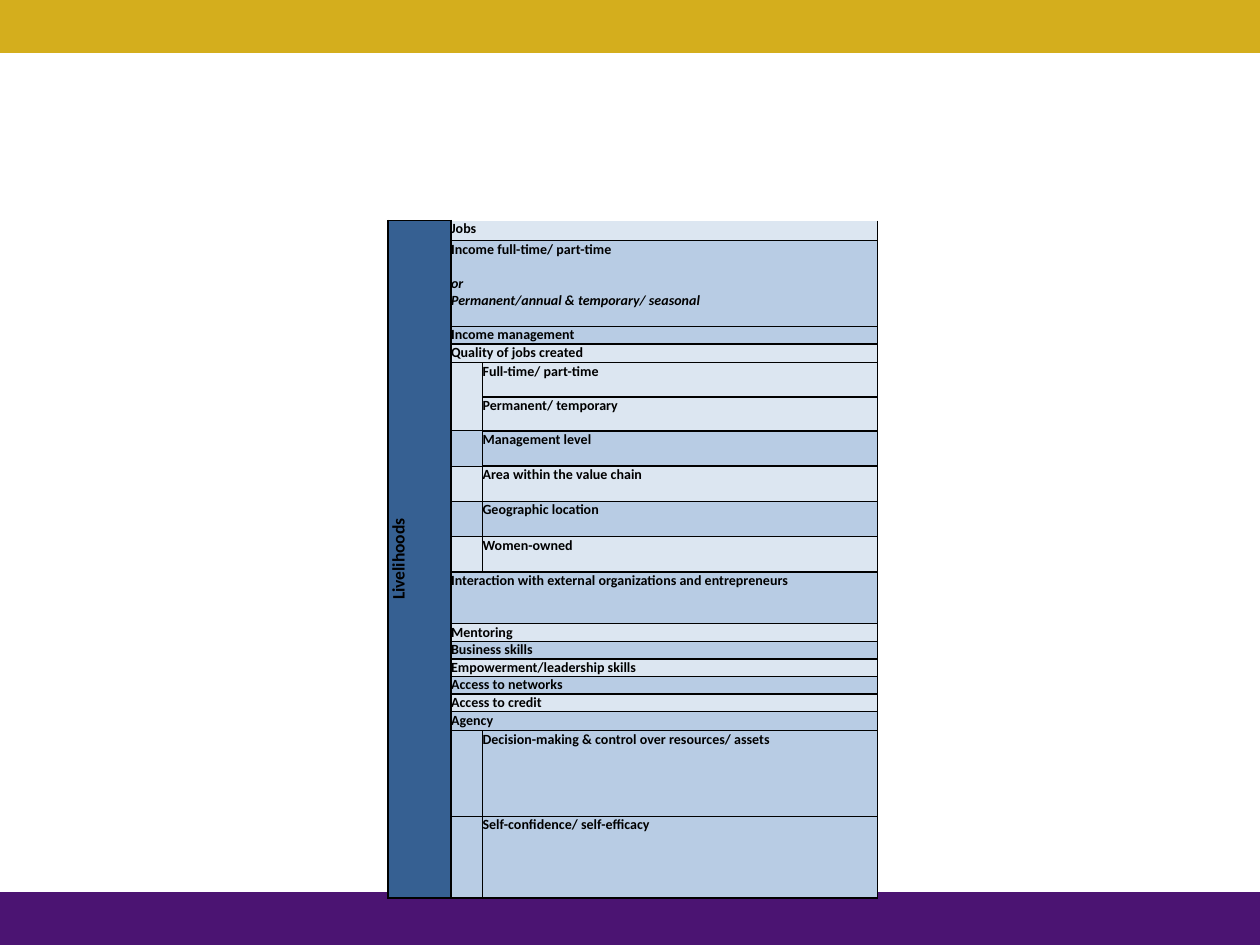
from lxml.etree import SubElement
from pptx import Presentation
from pptx.dml.color import RGBColor
from pptx.enum.shapes import MSO_SHAPE as Shape
from pptx.enum.text import MSO_ANCHOR as Anchor, PP_ALIGN as Align
from pptx.oxml.ns import qn
from pptx.util import Inches, Pt

GOLD = RGBColor(0xD4, 0xAE, 0x1D)
PURPLE = RGBColor(0x4B, 0x14, 0x72)
NAVY = RGBColor(0x36, 0x60, 0x92)
PALE = RGBColor(0xDC, 0xE6, 0xF1)
MID = RGBColor(0xB8, 0xCC, 0xE4)
BLACK = RGBColor(0, 0, 0)

COLUMN_WIDTHS = (0.5, 0.25, 3.13)
TOPICS = [
    ("Jobs", 0.16, PALE, False),
    ("Income full-time/ part-time", 0.68, MID, False),
    ("Income management", 0.14, MID, False),
    ("Quality of jobs created", 0.15, PALE, False),
    ("Full-time/ part-time", 0.27, PALE, True),
    ("Permanent/ temporary", 0.27, PALE, True),
    ("Management level", 0.27, MID, True),
    ("Area within the value chain", 0.27, PALE, True),
    ("Geographic location", 0.27, MID, True),
    ("Women-owned", 0.16, PALE, True),
    ("Interaction with external organizations and entrepreneurs", 0.41, MID, False),
    ("Mentoring", 0.14, PALE, False),
    ("Business skills", 0.14, MID, False),
    ("Empowerment/leadership skills", 0.14, PALE, False),
    ("Access to networks", 0.14, MID, False),
    ("Access to credit", 0.14, PALE, False),
    ("Agency", 0.15, MID, False),
    ("Decision-making & control over resources/ assets", 0.68, MID, True),
    ("Self-confidence/ self-efficacy", 0.64, MID, True),
]
INCOME_ROW = 1
SHARED_INDENT_ROW = 4
THIN_TOPIC_EDGES = {4, 17, 18}
THIN_INDENT_EDGES = {4, 5, 6, 7, 8, 9, 17, 18}


def write_text(paragraph, text, size=8, italic=False, align=Align.LEFT, before=0):
    paragraph.alignment = align
    paragraph.space_before = Pt(before)
    for font in (paragraph.font, paragraph.add_run().font):
        font.name = "Calibri"
        font.size = Pt(size)
        font.bold = True
        font.italic = italic
        font.color.rgb = BLACK
    paragraph.runs[0].text = text


def style_cell(cell, fill, left, right, top, bottom):
    cell.margin_left = cell.margin_right = cell.margin_top = cell.margin_bottom = 0
    properties = cell._tc.get_or_add_tcPr()
    for side, width in zip("LRTB", (left, right, top, bottom)):
        line = SubElement(properties, qn(f"a:ln{side}"), w=str(Pt(width)))
        if width:
            color = SubElement(line, qn("a:solidFill"))
            SubElement(color, qn("a:srgbClr"), val=str(BLACK))
        else:
            SubElement(line, qn("a:noFill"))
    cell.fill.solid()
    cell.fill.fore_color.rgb = fill


def edge_width(edge, thin_edges):
    if edge == 0:
        return 0
    return 0.5 if edge in thin_edges else 1


def add_band(slide, left, top, width, height, color):
    band = slide.shapes.add_shape(Shape.RECTANGLE, left, top, width, height)
    band.shadow.inherit = False
    band.fill.solid()
    band.fill.fore_color.rgb = color
    band.line.fill.background()


def add_topic_row(table, row, text, fill, indented):
    top = edge_width(row, THIN_TOPIC_EDGES)
    bottom = edge_width(row + 1, THIN_TOPIC_EDGES)
    indent, topic = table.cell(row, 1), table.cell(row, 2)
    if indented:
        style_cell(topic, fill, 0.5, 0.5, top, bottom)
        style_cell(indent, fill, 1, 0.5, edge_width(row, THIN_INDENT_EDGES),
                   edge_width(row + 1, THIN_INDENT_EDGES))
        write_text(indent.text_frame.paragraphs[0], "")
    else:
        indent.merge(topic)
        topic = indent
        style_cell(topic, fill, 1, 0.5, top, bottom)
    write_text(topic.text_frame.paragraphs[0], text)


def add_livelihoods_table(slide, left, top, width, height):
    table = slide.shapes.add_table(
        len(TOPICS), len(COLUMN_WIDTHS), left, top, width, height).table
    table.first_row = table.horz_banding = False
    for column, column_width in zip(table.columns, COLUMN_WIDTHS):
        column.width = Inches(column_width)

    for row, (text, row_height, fill, indented) in enumerate(TOPICS):
        table.rows[row].height = Inches(row_height)
        add_topic_row(table, row, text, fill, indented)
    table.cell(SHARED_INDENT_ROW, 1).merge(table.cell(SHARED_INDENT_ROW + 1, 1))

    income = table.cell(INCOME_ROW, 1).text_frame
    write_text(income.add_paragraph(), "or", italic=True, before=9.8)
    write_text(income.add_paragraph(), "Permanent/annual & temporary/ seasonal",
               italic=True)

    livelihoods = table.cell(0, 0)
    livelihoods.merge(table.cell(len(TOPICS) - 1, 0))
    style_cell(livelihoods, NAVY, 1, 1, 1, 1)
    livelihoods.vertical_anchor = Anchor.MIDDLE
    livelihoods._tc.get_or_add_tcPr().set("vert", "vert270")
    write_text(livelihoods.text_frame.paragraphs[0], "Livelihoods", size=10,
               align=Align.CENTER)


def main():
    deck = Presentation()
    deck.slide_width, deck.slide_height = Inches(10), Inches(7.5)
    slide = deck.slides.add_slide(deck.slide_layouts[6])
    band_height = Inches(0.42)
    add_band(slide, 0, 0, deck.slide_width, band_height, GOLD)
    add_band(slide, 0, deck.slide_height - band_height, deck.slide_width,
             band_height, PURPLE)
    add_livelihoods_table(slide, Inches(3.08), Inches(1.75), Inches(3.88), Inches(4.95))
    deck.save("out.pptx")


if __name__ == "__main__":
    main()
